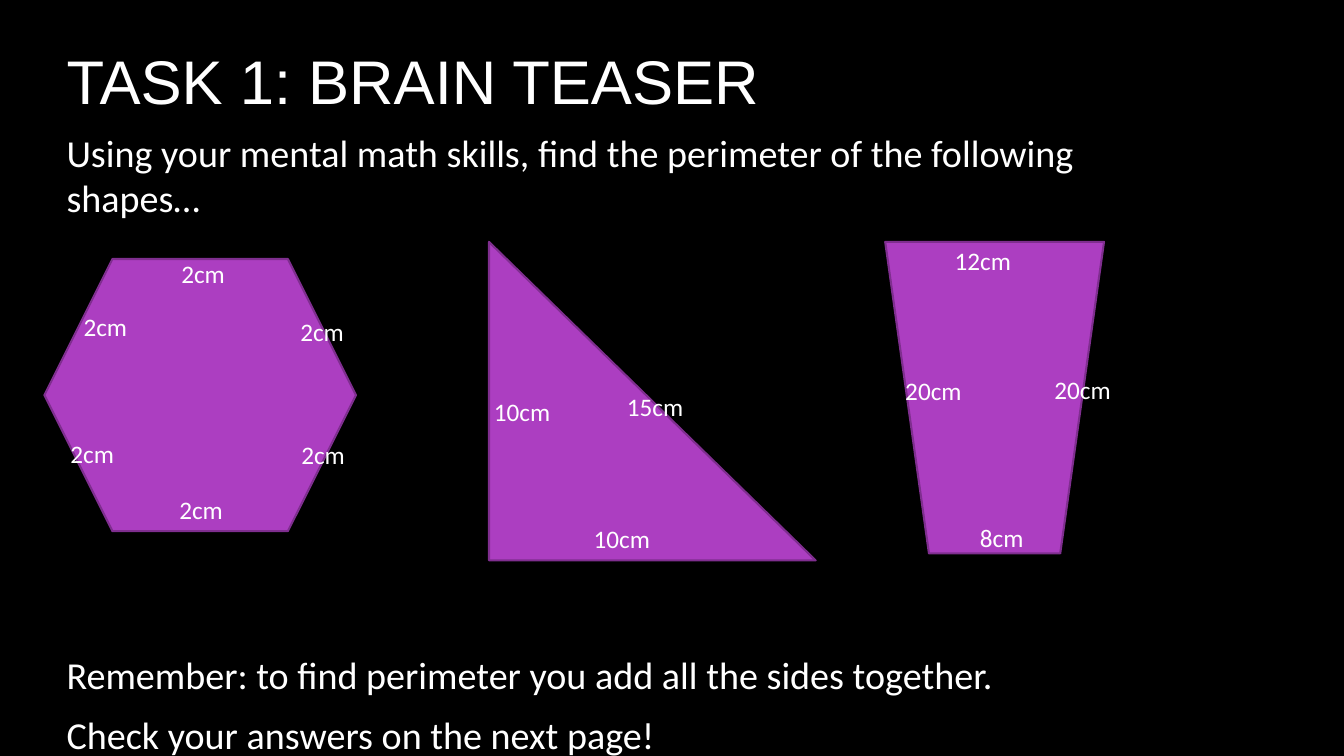
from dataclasses import dataclass

from lxml.etree import SubElement
from pptx import Presentation
from pptx.dml.color import RGBColor
from pptx.enum.shapes import MSO_SHAPE as Preset
from pptx.enum.text import MSO_ANCHOR as Anchor
from pptx.enum.text import MSO_AUTO_SIZE as AutoSize
from pptx.enum.text import PP_ALIGN as Align
from pptx.oxml.ns import qn
from pptx.slide import Slide
from pptx.util import Emu, Pt

EMU_PER_PX = 9144  # 100 px to the inch


@dataclass(frozen=True)
class Theme:
    background: RGBColor = RGBColor(0x00, 0x00, 0x00)
    text: RGBColor = RGBColor(0xFF, 0xFF, 0xFF)
    fill: RGBColor = RGBColor(0xAC, 0x3E, 0xC1)
    outline: RGBColor = RGBColor(0x7F, 0x2E, 0x8F)
    title_font: str = "Arial"
    body_font: str = "Calibri"
    title_size: float = 44
    body_size: float = 27.2
    label_size: float = 18


@dataclass(frozen=True)
class Box:
    left: int
    top: int
    width: int
    height: int

    def emu(self) -> tuple[Emu, ...]:
        lengths = (self.left, self.top, self.width, self.height)
        return tuple(Emu(length * EMU_PER_PX) for length in lengths)


@dataclass(frozen=True)
class SideLabel:
    text: str
    left: int
    top: int


@dataclass(frozen=True)
class Figure:
    preset: Preset
    box: Box
    labels: tuple[SideLabel, ...]


@dataclass(frozen=True)
class BodyLine:
    text: str
    space_before: int = 0


THEME = Theme()
SLIDE_WIDTH, SLIDE_HEIGHT = 1333, 750
TITLE_BOX = Box(56, 0, 1108, 159)
BODY_BOX = Box(56, 123, 1108, 567)
LABEL_WIDTH, LABEL_HEIGHT = 99, 42

TITLE = "TASK 1: BRAIN TEASER"
BODY_LINES = (
    BodyLine("Using your mental math skills, find the perimeter of the following shapes…"),
    BodyLine("Remember: to find perimeter you add all the sides together.", space_before=298),
    BodyLine("Check your answers on the next page!"),
)
FIGURES = (
    Figure(Preset.HEXAGON, Box(44, 257, 309, 270), (
        SideLabel("2cm", 170, 251),
        SideLabel("2cm", 60, 430),
        SideLabel("2cm", 73, 304),
        SideLabel("2cm", 288, 309),
        SideLabel("2cm", 168, 485),
        SideLabel("2cm", 289, 431),
    )),
    Figure(Preset.RIGHT_TRIANGLE, Box(485, 240, 324, 316), (
        SideLabel("10cm", 480, 388),
        SideLabel("10cm", 579, 514),
        SideLabel("15cm", 612, 383),
    )),
    Figure(Preset.FLOWCHART_MANUAL_OPERATION, Box(878, 240, 217, 309), (
        SideLabel("12cm", 937, 238),
        SideLabel("20cm", 888, 367),
        SideLabel("20cm", 1036, 366),
        SideLabel("8cm", 962, 513),
    )),
)


def place(shape, box: Box) -> None:
    shape.left, shape.top, shape.width, shape.height = box.emu()


def format_runs(paragraph, font_name: str, size: float) -> None:
    for run in paragraph.runs:
        run.font.name = font_name
        run.font.size = Pt(size)
        run.font.color.rgb = THEME.text


def fill_title(slide: Slide) -> None:
    title = slide.shapes.title
    place(title, TITLE_BOX)
    title.text_frame.text = TITLE
    title.text_frame.vertical_anchor = Anchor.MIDDLE
    paragraph = title.text_frame.paragraphs[0]
    paragraph.alignment = Align.LEFT
    format_runs(paragraph, THEME.title_font, THEME.title_size)


def fill_body(slide: Slide) -> None:
    body = slide.placeholders[1]
    place(body, BODY_BOX)
    text_frame = body.text_frame
    text_frame.text = "\n".join(line.text for line in BODY_LINES)
    text_frame.auto_size = AutoSize.NONE
    text_frame.vertical_anchor = Anchor.TOP
    for paragraph, line in zip(text_frame.paragraphs, BODY_LINES):
        # Plain paragraphs: no bullet and no hanging indent
        properties = paragraph._p.get_or_add_pPr()
        properties.set("marL", "0")
        properties.set("indent", "0")
        SubElement(properties, qn("a:buNone"))
        paragraph.space_before = Pt(line.space_before)
        paragraph.space_after = Pt(10)
        format_runs(paragraph, THEME.body_font, THEME.body_size)


def draw_figure(slide: Slide, figure: Figure) -> None:
    shape = slide.shapes.add_shape(figure.preset, *figure.box.emu())
    shape.shadow.inherit = False
    shape.fill.solid()
    shape.fill.fore_color.rgb = THEME.fill
    shape.line.color.rgb = THEME.outline
    shape.line.width = Pt(1.5)
    for label in figure.labels:
        draw_label(slide, label)


def draw_label(slide: Slide, label: SideLabel) -> None:
    box = Box(label.left, label.top, LABEL_WIDTH, LABEL_HEIGHT)
    text_frame = slide.shapes.add_textbox(*box.emu()).text_frame
    text_frame.word_wrap = True
    text_frame.auto_size = AutoSize.SHAPE_TO_FIT_TEXT
    text_frame.text = label.text
    format_runs(text_frame.paragraphs[0], THEME.body_font, THEME.label_size)


def main() -> None:
    presentation = Presentation()
    presentation.slide_width = Emu(SLIDE_WIDTH * EMU_PER_PX)
    presentation.slide_height = Emu(SLIDE_HEIGHT * EMU_PER_PX)
    slide = presentation.slides.add_slide(presentation.slide_layouts[1])
    slide.background.fill.solid()
    slide.background.fill.fore_color.rgb = THEME.background

    # Heading and instructions
    fill_title(slide)
    fill_body(slide)

    # Figures with their side lengths
    for figure in FIGURES:
        draw_figure(slide, figure)

    presentation.save("out.pptx")


if __name__ == "__main__":
    main()
